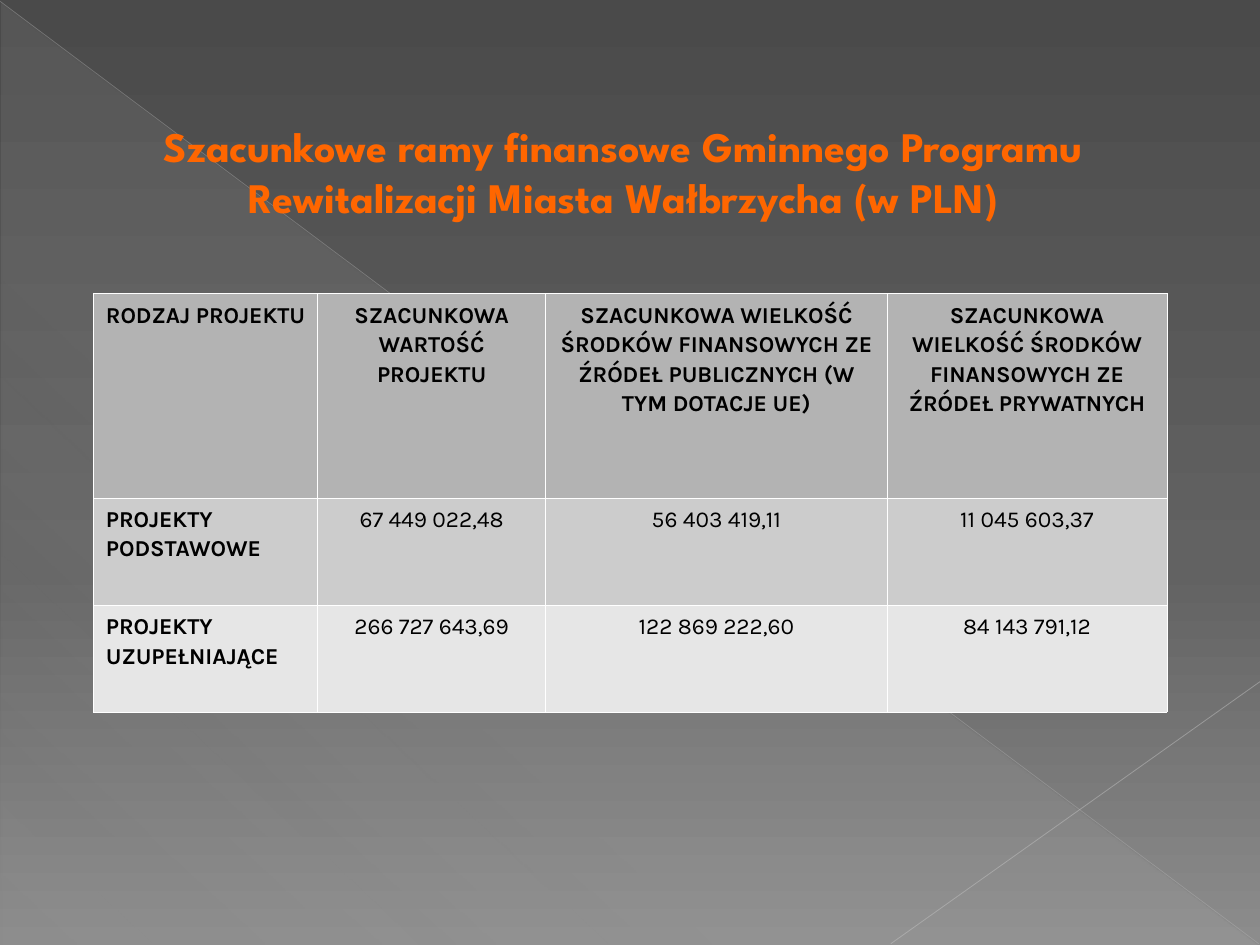
from lxml import etree
from pptx import Presentation
from pptx.dml.color import RGBColor
from pptx.enum import shapes, text
from pptx.oxml import ns
from pptx.util import Inches, Pt

COLORS = {
    "bg_top": "4A4A4A", "bg_mid": "626262", "bg_bottom": "8C8C8C",
    "facet": "D2D2D2", "diagonal": "BFBFBF", "corner": "C6C6C6",
    "title": "FF6600", "text": "000000", "border": "FFFFFF",
    "header": "B3B3B3", "basic": "CCCCCC", "extra": "E6E6E6",
}
ROWS = [
    ["RODZAJ PROJEKTU", "SZACUNKOWA WARTOŚĆ PROJEKTU",
     "SZACUNKOWA WIELKOŚĆ ŚRODKÓW FINANSOWYCH ZE ŹRÓDEŁ PUBLICZNYCH (W TYM DOTACJE UE)",
     "SZACUNKOWA WIELKOŚĆ ŚRODKÓW FINANSOWYCH ZE ŹRÓDEŁ PRYWATNYCH"],
    ["PROJEKTY PODSTAWOWE", "67 449 022,48", "56 403 419,11", "11 045 603,37"],
    ["PROJEKTY UZUPEŁNIAJĄCE", "266 727 643,69", "122 869 222,60", "84 143 791,12"],
]
ROW_FILLS = ["header", "basic", "extra"]
COL_WIDTHS = [1.78, 1.81, 2.71, 2.22]
ROW_HEIGHTS = [1.62, 0.85, 0.85]
TITLE_FONT = {"name": "League Spartan", "size": Pt(24), "bold": True}
CELL_FONT = {"name": "Karla", "size": Pt(13)}


def rgb(key):
    return RGBColor.from_string(COLORS[key])


def add(parent, tag, **attrs):
    el = etree.SubElement(parent, ns.qn(tag))
    for name, value in attrs.items():
        el.set(name, str(value))
    return el


def add_color(parent, key, opacity=100):
    clr = add(parent, "a:srgbClr", val=COLORS[key])
    if opacity < 100:
        add(clr, "a:alpha", val=opacity * 1000)


def set_gradient(parent, stops, angle):
    """Replace the solid fill of parent by stops of (position, colour, opacity)."""
    solid = parent.find(ns.qn("a:solidFill"))
    grad = etree.Element(ns.qn("a:gradFill"), rotWithShape="1")
    gs_list = add(grad, "a:gsLst")
    for pos, key, opacity in stops:
        add_color(add(gs_list, "a:gs", pos=pos * 1000), key, opacity)
    add(grad, "a:lin", ang=angle * 60000, scaled=0)
    parent.replace(solid, grad)


def style_font(font, key, formats):
    for name, value in formats.items():
        setattr(font, name, value)
    font.color.rgb = rgb(key)


def add_background(s):
    s.background.fill.solid()
    set_gradient(s.element.find(".//" + ns.qn("p:bgPr")),
                 [(0, "bg_top", 100), (60, "bg_mid", 100), (100, "bg_bottom", 100)], 90)


def add_facet(s):
    sp = s.shapes.add_shape(shapes.MSO_SHAPE.RIGHT_TRIANGLE, Inches(0.01),
                            Inches(0.02), Inches(9.98), Inches(7.48))
    sp.shadow.inherit = False
    sp.line.fill.background()
    sp.fill.solid()
    set_gradient(sp.element.spPr,
                 [(0, "facet", 10), (70, "facet", 8), (100, "facet", 1)], 133)


def add_line(s, start, end, key, width, opacity):
    ln = s.shapes.add_connector(shapes.MSO_CONNECTOR.STRAIGHT,
                                *map(Inches, start + end))
    ln.line.width = Pt(width)
    ln.line.color.rgb = rgb(key)
    clr = ln.element.spPr.find(".//" + ns.qn("a:srgbClr"))
    add(clr, "a:alpha", val=opacity * 1000)
    add(ln.element.spPr, "a:effectLst")


def add_title(s, title_text):
    sp = s.shapes.title
    s.shapes.element.append(sp.element)  # bring in front of the background shapes
    sp.left, sp.top, sp.width, sp.height = map(Inches, (0.45, 0.6, 8.99, 1.52))
    tf = sp.text_frame
    tf.text = title_text
    tf.word_wrap = True
    tf.auto_size = text.MSO_AUTO_SIZE.NONE
    tf.vertical_anchor = text.MSO_ANCHOR.MIDDLE
    p = tf.paragraphs[0]
    p.alignment = text.PP_ALIGN.CENTER
    style_font(p.runs[0].font, "title", TITLE_FONT)


def set_borders(cell):
    tc_pr = cell._tc.get_or_add_tcPr()
    for side in ("a:lnL", "a:lnR", "a:lnT", "a:lnB"):
        add_color(add(add(tc_pr, side, w=Pt(0.06)), "a:solidFill"), "border")


def fill_cell(cell, content, fill, bold, align):
    set_borders(cell)
    cell.fill.solid()
    cell.fill.fore_color.rgb = rgb(fill)
    cell.text = content
    p = cell.text_frame.paragraphs[0]
    p.alignment = align
    p.line_spacing = 1.11
    style_font(p.runs[0].font, "text", {**CELL_FONT, "bold": bold})


def add_budget_table(s):
    table = s.shapes.add_table(len(ROWS), len(COL_WIDTHS), Inches(0.74), Inches(2.33),
                               Inches(sum(COL_WIDTHS)), Inches(sum(ROW_HEIGHTS))).table
    for col, width in zip(table.columns, COL_WIDTHS):
        col.width = Inches(width)
    for i, (row, height) in enumerate(zip(table.rows, ROW_HEIGHTS)):
        row.height = Inches(height)
        for j, cell in enumerate(row.cells):
            is_label = i > 0 and j == 0
            align = text.PP_ALIGN.LEFT if is_label else text.PP_ALIGN.CENTER
            fill_cell(cell, ROWS[i][j], ROW_FILLS[i], i == 0 or is_label, align)


def main():
    prs = Presentation()
    prs.slide_width, prs.slide_height = Inches(10), Inches(7.5)
    s = prs.slides.add_slide(prs.slide_layouts[5])
    add_background(s)
    add_facet(s)
    add_line(s, (0, 0.01), (9.99, 7.49), "diagonal", 0.39, 35)
    add_line(s, (10, 5.41), (7.07, 7.49), "corner", 0.47, 45)
    add_title(s, "Szacunkowe ramy finansowe Gminnego Programu "
                 "Rewitalizacji Miasta Wałbrzycha (w PLN)")
    add_budget_table(s)
    prs.save("out.pptx")


if __name__ == "__main__":
    main()
